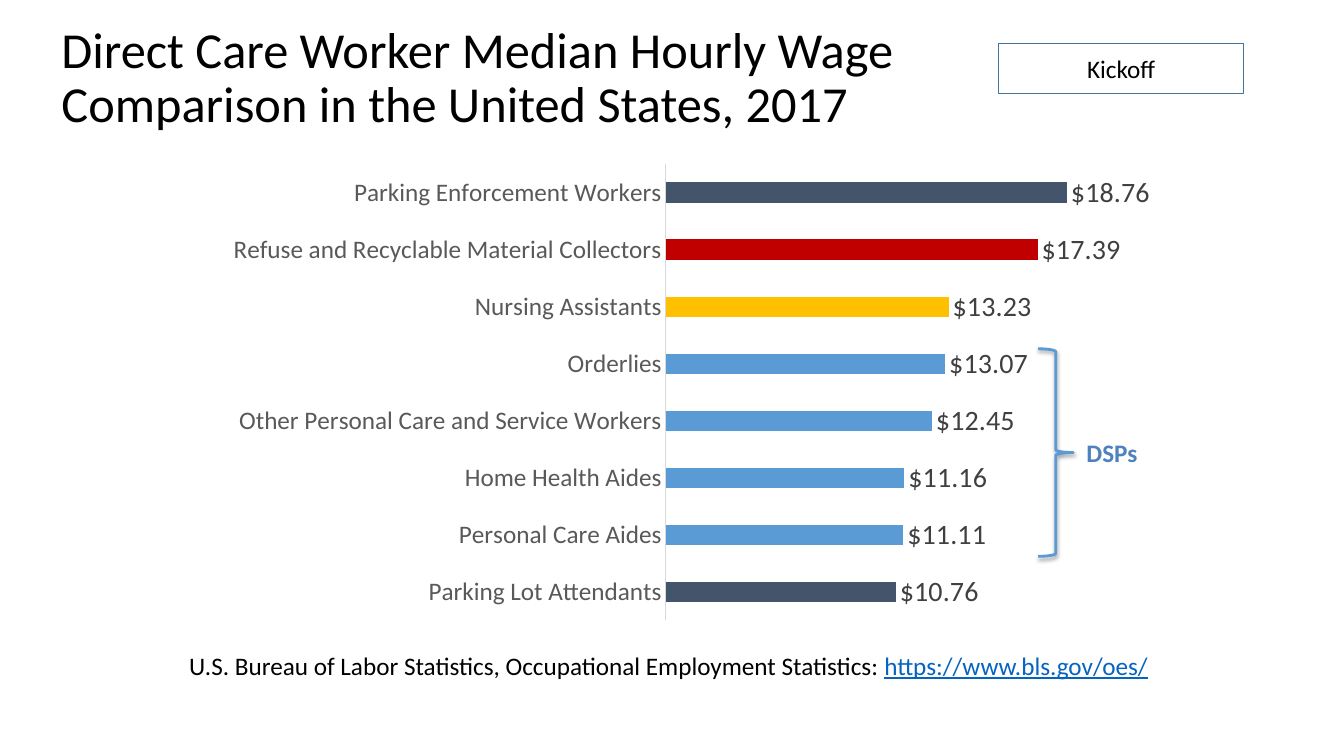
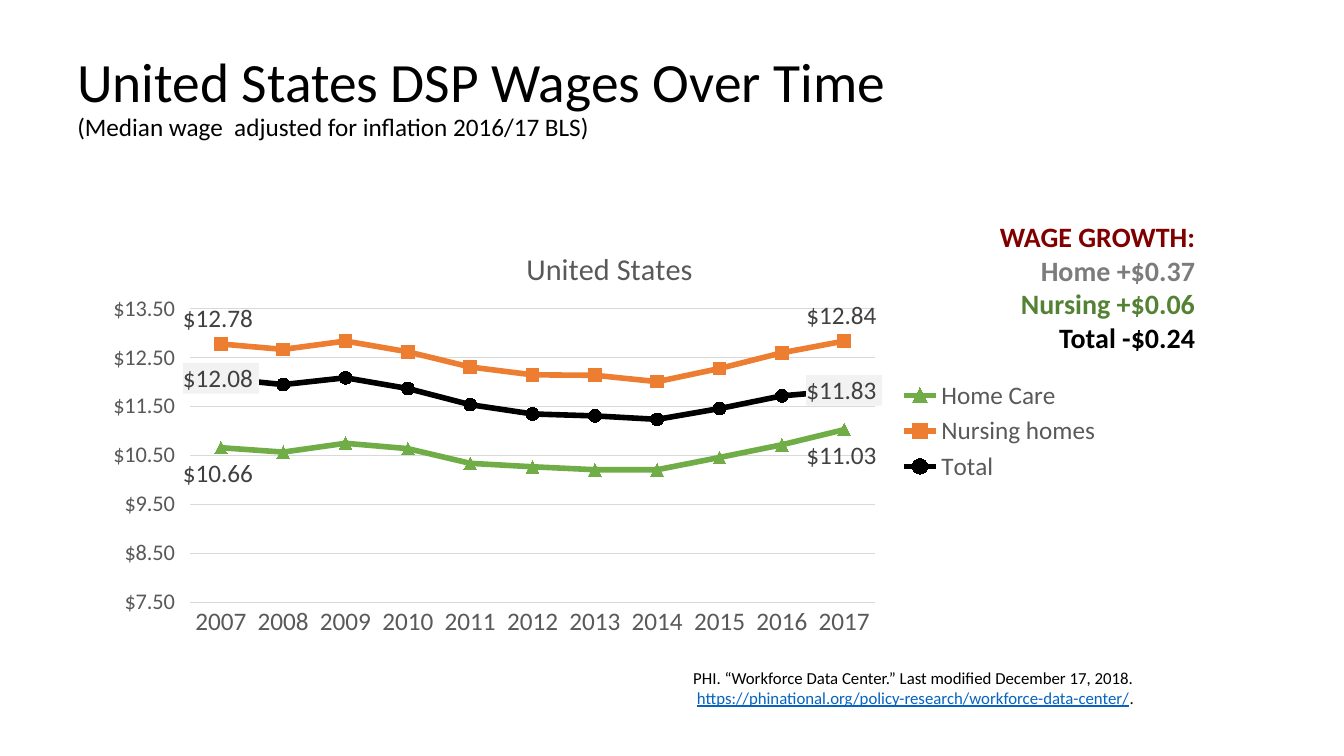
from lxml.etree import SubElement
from pptx import Presentation
from pptx.chart.data import CategoryChartData
from pptx.dml.color import RGBColor
from pptx.enum.chart import (XL_CHART_TYPE, XL_LABEL_POSITION, XL_LEGEND_POSITION,
                             XL_MARKER_STYLE, XL_TICK_MARK)
from pptx.enum.shapes import MSO_SHAPE
from pptx.enum.text import MSO_ANCHOR, PP_ALIGN
from pptx.oxml import parse_xml
from pptx.oxml.ns import nsdecls, qn
from pptx.util import Cm, Pt

FONT = "Calibri"
BLACK, GRAY, DARK_GRAY, PALE_GRAY, RULE = "000000", "595959", "404040", "F2F2F2", "D9D9D9"
SLATE, RED, GOLD, BLUE = "44546A", "C00000", "FFC000", "5B9BD5"
GREEN, ORANGE = "70AD47", "ED7D31"
LINK = {"color": "0563C1", "underline": True}
DOLLARS = '"$"#,##0.00'
ACCOUNTING = '"$"#,##0.00_);[Red]\\("$"#,##0.00\\)'

WAGES = [
    ("Parking Enforcement Workers", 18.76, SLATE),
    ("Refuse and Recyclable Material Collectors", 17.39, RED),
    ("Nursing Assistants", 13.23, GOLD),
    ("Orderlies", 13.07, BLUE),
    ("Other Personal Care and Service Workers", 12.45, BLUE),
    ("Home Health Aides", 11.16, BLUE),
    ("Personal Care Aides", 11.11, BLUE),
    ("Parking Lot Attendants", 10.76, SLATE),
]
YEARS = [str(year) for year in range(2007, 2018)]
TRENDS = [
    ("Home Care", GREEN, XL_MARKER_STYLE.TRIANGLE, XL_LABEL_POSITION.BELOW, None,
     (10.66, 10.57, 10.75, 10.64, 10.34, 10.27, 10.21, 10.21, 10.46, 10.72, 11.03)),
    ("Nursing homes", ORANGE, XL_MARKER_STYLE.SQUARE, XL_LABEL_POSITION.ABOVE, None,
     (12.78, 12.67, 12.84, 12.62, 12.31, 12.15, 12.14, 12.01, 12.28, 12.6, 12.84)),
    ("Total", BLACK, XL_MARKER_STYLE.CIRCLE, XL_LABEL_POSITION.CENTER, PALE_GRAY,
     (12.08, 11.95, 12.09, 11.87, 11.54, 11.35, 11.31, 11.24, 11.46, 11.72, 11.83)),
]
GROWTH = [
    ("WAGE GROWTH:", "800000"),
    ("Home +$0.37", "7C7C7C"),
    ("Nursing +$0.06", "548235"),
    ("Total -$0.24", BLACK),
]
WAGE_TITLE = [[("Direct Care Worker Median Hourly Wage Comparison in the United States, 2017", {})]]
WAGE_SOURCE = [[
    ("U.S. Bureau of Labor Statistics, Occupational Employment Statistics: ", {}),
    ("https://www.bls.gov/oes/", LINK),
]]
TREND_TITLE = [[
    ("United States DSP Wages Over Time", {}),
    ("\n", {}),
    ("(Median wage  adjusted for inflation 2016/17 BLS)", {"size": 18}),
]]
TREND_SOURCE = [[
    ("PHI. “Workforce Data Center.” Last modified December 17, 2018.", {}),
    ("\n", {}),
    (" ", {}),
    ("https://phinational.org/policy-research/workforce-data-center/", LINK),
    (".", {}),
]]


def rgb(value):
    return RGBColor.from_string(value)


def set_font(font, size, color=BLACK, bold=False, underline=False):
    font.name = FONT
    font.size = Pt(size)
    font.color.rgb = rgb(color)
    font.bold = bold
    font.underline = underline


def set_line(line, color, width):
    line.color.rgb = rgb(color)
    line.width = Pt(width)


def write(shape, paragraphs, size, align=PP_ALIGN.LEFT, anchor=MSO_ANCHOR.TOP, spacing=None):
    frame = shape.text_frame
    frame.word_wrap = True
    frame.vertical_anchor = anchor
    for index, runs in enumerate(paragraphs):
        paragraph = frame.add_paragraph() if index else frame.paragraphs[0]
        paragraph.alignment = align
        paragraph.line_spacing = spacing
        for text, style in runs:
            if text == "\n":
                paragraph.add_line_break()
                continue
            run = paragraph.add_run()
            run.text = text
            set_font(run.font, **{"size": size, **style})


def add_text(slide, box, paragraphs, size, **options):
    write(slide.shapes.add_textbox(*map(Cm, box)), paragraphs, size, **options)


def add_title(slide, box, paragraphs, size):
    add_text(slide, box, paragraphs, size, anchor=MSO_ANCHOR.MIDDLE, spacing=0.9)


def add_outline(slide, preset, box, color, width):
    shape = slide.shapes.add_shape(preset, *map(Cm, box))
    shape.shadow.inherit = False
    shape.fill.background()
    set_line(shape.line, color, width)
    return shape


def set_layout(parent, inner=False, **fractions):
    layout = parent.find(qn("c:layout"))
    if layout is None:
        layout = parse_xml(f"<c:layout {nsdecls('c')}/>")
        anchor = parent.find(qn("c:tx"))
        if anchor is None:
            parent.insert(0, layout)
        else:
            anchor.addnext(layout)
    for child in list(layout):
        layout.remove(child)
    manual = SubElement(layout, qn("c:manualLayout"))
    if inner:
        SubElement(manual, qn("c:layoutTarget")).set("val", "inner")
    for name in ("xMode", "yMode"):
        SubElement(manual, qn(f"c:{name}")).set("val", "edge")
    for name, value in fractions.items():
        SubElement(manual, qn(f"c:{name}")).set("val", str(value))


def add_chart(slide, kind, box, categories, series, number_format, plot_area):
    data = CategoryChartData(number_format=number_format)
    data.categories = categories
    for name, values in series:
        data.add_series(name, values)
    chart = slide.shapes.add_chart(kind, *map(Cm, box), data).chart
    set_font(chart.font, 18)
    chart.has_title = False
    chart.has_legend = False
    chart.plots[0].vary_by_categories = False
    axis = chart.category_axis
    axis.major_tick_mark = XL_TICK_MARK.NONE
    set_line(axis.format.line, RULE, 0.75)
    set_font(axis.tick_labels.font, 18, GRAY)
    set_layout(chart._chartSpace.chart.plotArea, True,
               **dict(zip("xywh", plot_area)))
    return chart


def add_wage_chart(slide):
    names, values, colors = zip(*WAGES)
    chart = add_chart(slide, XL_CHART_TYPE.BAR_CLUSTERED, (4.52, 3.76, 24.51, 12.5), names,
                      [("Series 1", values)], DOLLARS, (0.5, 0.03, 0.44, 0.92))
    chart.category_axis.reverse_order = True
    axis = chart.value_axis
    axis.minimum_scale, axis.maximum_scale = 0, 20
    axis.has_major_gridlines = False
    axis.visible = False
    plot = chart.plots[0]
    plot.gap_width = 182
    series = plot.series[0]
    for index, color in enumerate(colors):
        fill = series.points[index].format.fill
        fill.solid()
        fill.fore_color.rgb = rgb(color)
    labels = series.data_labels
    labels.show_value = True
    labels.number_format = DOLLARS
    labels.number_format_is_linked = False
    labels.position = XL_LABEL_POSITION.OUTSIDE_END
    set_font(labels.font, 20, DARK_GRAY)


def style_trend(series, color, marker, position, label_fill):
    series.smooth = False
    set_line(series.format.line, color, 4)
    series.marker.style = marker
    series.marker.size = 9
    series.marker.format.fill.solid()
    series.marker.format.fill.fore_color.rgb = rgb(color)
    set_line(series.marker.format.line, color, 0.75)
    for index in (0, len(YEARS) - 1):
        label = series.points[index].data_label
        set_font(label.font, 18, DARK_GRAY)
        label.position = position
        if label_fill:
            label._dLbl.find(qn("c:txPr")).addprevious(parse_xml(
                f"<c:spPr {nsdecls('c', 'a')}><a:solidFill>"
                f'<a:srgbClr val="{label_fill}"/></a:solidFill></c:spPr>'))


def add_trend_chart(slide):
    chart = add_chart(slide, XL_CHART_TYPE.LINE_MARKERS, (2.34, 5.46, 25.68, 10.8), YEARS,
                      [(trend[0], trend[-1]) for trend in TRENDS], ACCOUNTING,
                      (0.095, 0.215, 0.673, 0.685))
    chart.has_title = True
    run = chart.chart_title.text_frame.paragraphs[0].add_run()
    run.text = "United States"
    set_font(run.font, 21.6, GRAY)
    set_layout(chart.chart_title._element, x=0.42, y=0.06)
    chart.has_legend = True
    chart.legend.position = XL_LEGEND_POSITION.RIGHT
    chart.legend.include_in_layout = False
    set_font(chart.legend.font, 18, GRAY)
    axis = chart.value_axis
    axis.minimum_scale, axis.maximum_scale, axis.major_unit = 7.5, 13.5, 1
    axis.major_tick_mark = XL_TICK_MARK.OUTSIDE
    axis.format.line.fill.background()
    set_line(axis.major_gridlines.format.line, RULE, 0.75)
    axis.tick_labels.number_format = ACCOUNTING
    axis.tick_labels.number_format_is_linked = False
    set_font(axis.tick_labels.font, 16, GRAY)
    for series, trend in zip(chart.plots[0].series, TRENDS):
        style_trend(series, *trend[1:-1])


def add_brace(slide):
    brace = add_outline(slide, MSO_SHAPE.RIGHT_BRACE, (26.16, 8.79, 0.89, 5.23), BLUE, 2)
    brace.adjustments[0] = 0.08
    brace.adjustments[1] = 0.5
    effects = brace._element.spPr.find(qn("a:effectLst"))
    effects.append(parse_xml(
        f"<a:outerShdw {nsdecls('a')} blurRad=\"{Pt(3.1)}\" dist=\"{Pt(1.6)}\" dir=\"5400000\" "
        'rotWithShape="0"><a:srgbClr val="000000"><a:alpha val="38000"/></a:srgbClr>'
        "</a:outerShdw>"))


def build_wage_slide(slide):
    add_title(slide, (1.3, 0.89, 21.56, 2.21), WAGE_TITLE, 36)
    add_text(slide, (4.52, 16.26, 25.12, 1.02), WAGE_SOURCE, 18)
    add_wage_chart(slide)
    add_brace(slide)
    add_text(slide, (27.13, 10.9, 1.8, 1.02), [[("DSPs", {"color": "4F81BD", "bold": True})]], 18)
    tag = add_outline(slide, MSO_SHAPE.RECTANGLE, (25.17, 1.09, 6.17, 1.27), "43739E", 1)
    write(tag, [[("Kickoff", {})]], 18, align=PP_ALIGN.CENTER, anchor=MSO_ANCHOR.MIDDLE)


def build_trend_slide(slide):
    add_trend_chart(slide)
    add_title(slide, (1.7, 0.58, 21.23, 3.81), TREND_TITLE, 39.6)
    growth = [[(text, {"color": color, "bold": True})] for text, color in GROWTH]
    add_text(slide, (23.44, 5.41, 6.93, 3.68), growth, 20, align=PP_ALIGN.RIGHT)
    add_text(slide, (17.22, 16.69, 12.42, 1.27), TREND_SOURCE, 12)


def main():
    presentation = Presentation()
    presentation.slide_width, presentation.slide_height = Cm(33.87), Cm(19.05)
    for build in (build_wage_slide, build_trend_slide):
        build(presentation.slides.add_slide(presentation.slide_layouts[6]))
    presentation.save("out.pptx")


if __name__ == "__main__":
    main()
